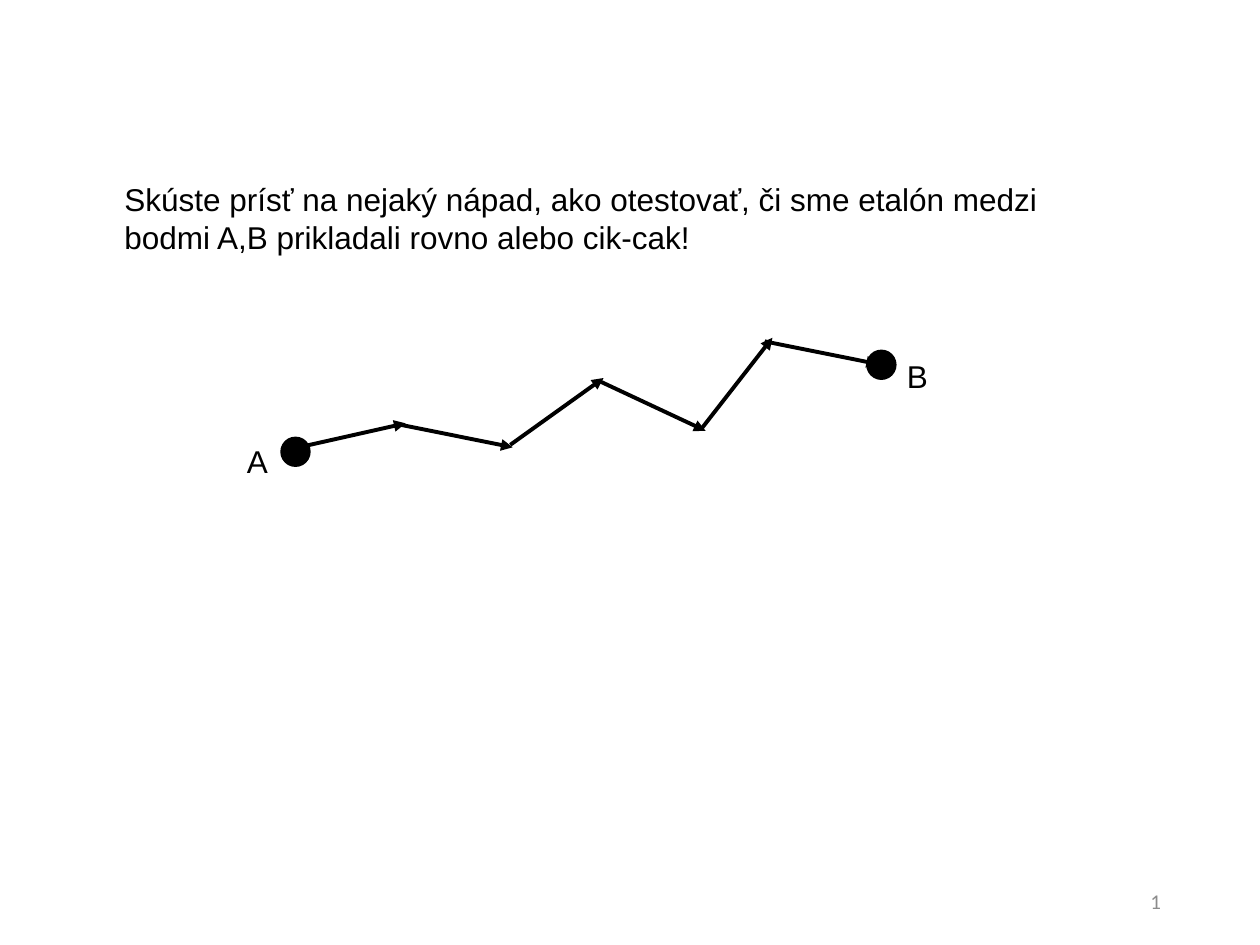
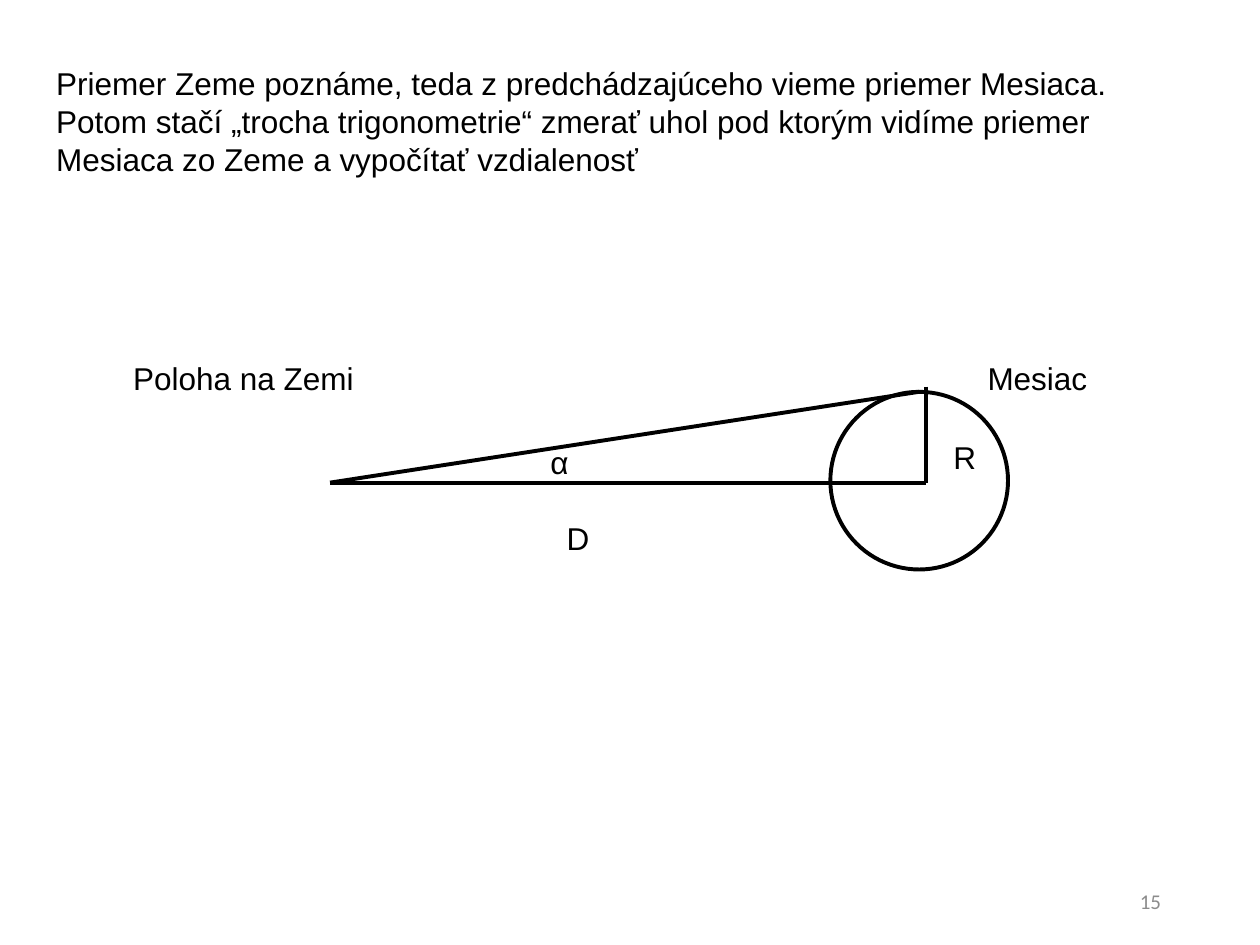
from collections import namedtuple

from lxml.etree import SubElement
from pptx import Presentation
from pptx.dml.color import RGBColor
from pptx.enum.shapes import MSO_CONNECTOR as Connector, MSO_SHAPE as Shape
from pptx.enum.text import MSO_ANCHOR as Anchor, PP_ALIGN as Align
from pptx.oxml.ns import qn
from pptx.util import Pt

COLOURS = {"ink": "000000", "number": "8C8C8C"}
STROKE = 2.25
LABEL_HEIGHT = 28.8
Box = namedtuple("Box", "left top width height")


def colour(name):
    """Return the named colour of the deck."""
    return RGBColor.from_string(COLOURS[name])


def inside(box, left, top, width, height):
    """Return a box placed relative to another one."""
    return Box(box.left + left, box.top + top, width, height)


def add_text(page, box, text, size=18, font="Arial", ink="ink",
             align=Align.LEFT, anchor=Anchor.TOP):
    """Write one paragraph in a wrapping text box."""
    frame = page.shapes.add_textbox(*map(Pt, box)).text_frame
    frame.word_wrap = True
    frame.vertical_anchor = anchor
    para = frame.paragraphs[0]
    para.alignment = align
    span = para.add_run()
    span.text = text
    span.font.size = Pt(size)
    span.font.name = font
    span.font.color.rgb = colour(ink)


def add_labels(page, box, labels):
    """Write the labels of a drawing, each given as text, left, top and width."""
    for text, left, top, width in labels:
        add_text(page, inside(box, left, top, width, LABEL_HEIGHT), text)


def add_line(page, box, start, end, arrow=False):
    """Draw a straight line between two points of a box."""
    ends = [box.left + start[0], box.top + start[1],
            box.left + end[0], box.top + end[1]]
    line = page.shapes.add_connector(Connector.STRAIGHT, *map(Pt, ends))
    line.line.color.rgb = colour("ink")
    line.line.width = Pt(STROKE)
    if arrow:
        SubElement(line.line._get_or_add_ln(), qn("a:tailEnd"), type="triangle")
    SubElement(line._element.spPr, qn("a:effectLst"))
    return line


def add_circle(page, box, left, top, size, filled=False):
    """Draw a circle, solid or in outline, inside a box."""
    place = inside(box, left, top, size, size)
    circle = page.shapes.add_shape(Shape.OVAL, *map(Pt, place))
    circle.shadow.inherit = False
    circle.line.color.rgb = colour("ink")
    circle.line.width = Pt(STROKE)
    if filled:
        circle.fill.solid()
        circle.fill.fore_color.rgb = colour("ink")
    else:
        circle.fill.background()
    return circle


def draw_zigzag(page, box):
    """Draw the zigzag of measuring steps from point A to point B."""
    steps = [
        ((33.8, 63.3), (97.8, 48.9)),
        ((94.2, 49.6), (159, 62.6)),
        ((157.6, 61.2), (210.9, 23)),
        ((209.4, 25.2), (269.2, 53.2)),
        ((267, 51.8), (307.4, 0)),
        ((303, 2.1), (367.8, 15.1)),
    ]
    for start, end in steps:
        add_line(page, box, start, end, arrow=True)
    for left, top in [(27.3, 57.6), (362.1, 7.9)]:
        add_circle(page, box, left, top, 15.1, filled=True)
    add_labels(page, box, [("A", 0, 56.1, 28), ("B", 377.2, 7.2, 28)])


def draw_moon_triangle(page, box):
    """Draw the triangle between the observer on Earth and the Moon."""
    observer, centre = (119.6, 74.2), (460.2, 74.2)
    moon_top = (455.9, 22.3)
    moon = add_circle(page, box, 405.5, 22.3, 101.5)
    add_line(page, box, observer, centre)
    add_line(page, box, (centre[0], 19.4), centre)
    sight = add_line(page, box, observer, moon_top)
    sight.end_connect(moon, 0)
    add_labels(page, box, [
        ("Poloha na Zemi", 0, 0, 183),
        ("Mesiac", 488.2, 0, 114.5),
        ("D", 247.7, 91.4, 36.7),
        ("R", 468.8, 45.4, 26.6),
        ("α", 238.4, 48.2, 42.5),
    ])


def add_page(deck, text, text_box, draw, drawing_box, number):
    """Add a page with a text, a drawing and its page number."""
    page = deck.slides.add_slide(deck.slide_layouts[6])
    add_text(page, text_box, text)
    draw(page, drawing_box)
    add_text(page, Box(508.5, 500.5, 162, 28.8), number, size=12,
             font="Calibri", ink="number", align=Align.RIGHT,
             anchor=Anchor.MIDDLE)


def main():
    """Build the deck and save it."""
    deck = Presentation()
    deck.slide_width, deck.slide_height = Pt(720), Pt(540)
    add_page(
        deck,
        "Skúste prísť na nejaký nápad, ako otestovať, či sme etalón medzi "
        "bodmi A,B prikladali rovno alebo cik-cak!",
        Box(64, 99.4, 572.4, 51), draw_zigzag, Box(134, 193, 405, 85), "1")
    add_page(
        deck,
        "Priemer Zeme poznáme, teda z predchádzajúceho vieme priemer Mesiaca. "
        "Potom stačí „trocha trigonometrie“ zmerať uhol pod ktorým vidíme "
        "priemer Mesiaca zo Zeme a vypočítať vzdialenosť",
        Box(25, 33, 641, 72.7), draw_moon_triangle,
        Box(69, 201.6, 603, 124), "15")
    deck.save("out.pptx")


if __name__ == "__main__":
    main()
